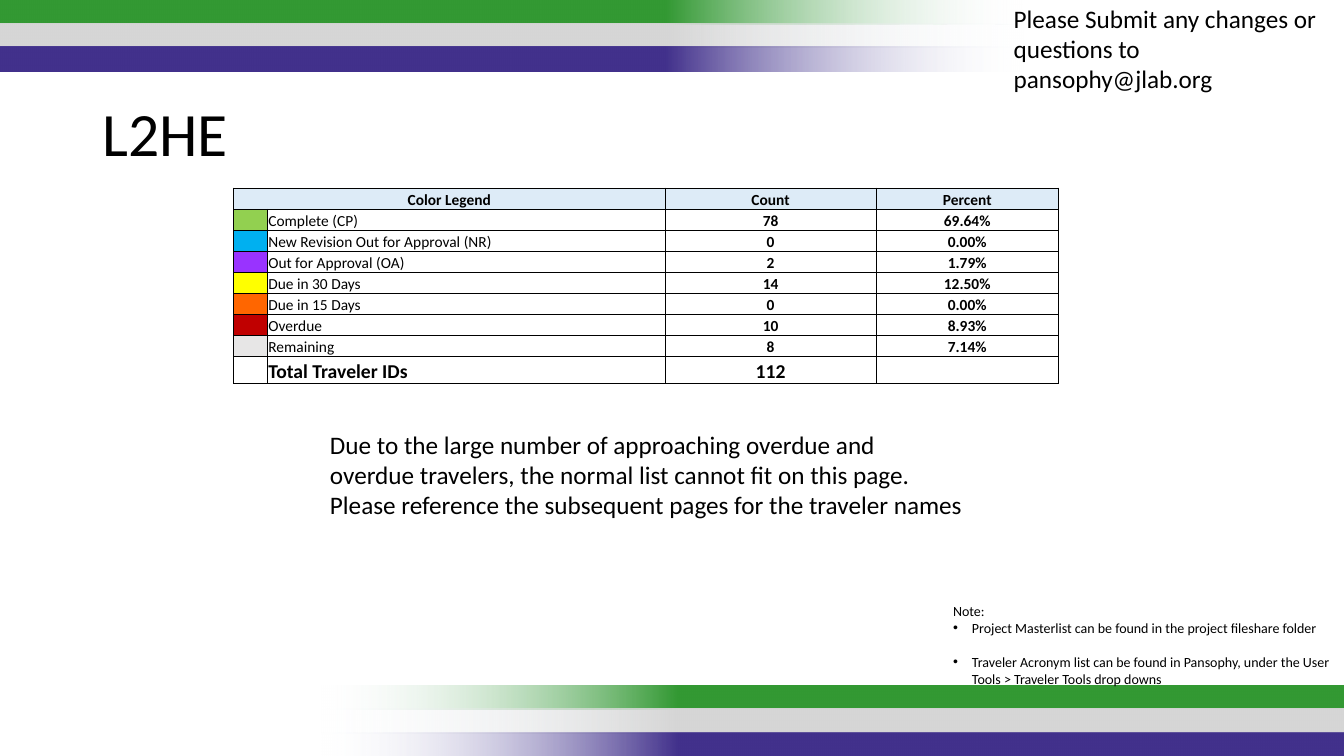
from copy import deepcopy
from dataclasses import dataclass

from lxml import etree
from pptx import Presentation
from pptx.dml.color import RGBColor
from pptx.enum.shapes import MSO_SHAPE
from pptx.enum.text import MSO_ANCHOR, MSO_AUTO_SIZE, PP_ALIGN
from pptx.oxml.ns import qn
from pptx.util import Pt

RECTANGLE = MSO_SHAPE.RECTANGLE
TOP, MIDDLE, BOTTOM = MSO_ANCHOR.TOP, MSO_ANCHOR.MIDDLE, MSO_ANCHOR.BOTTOM
LEFT, CENTER = PP_ALIGN.LEFT, PP_ALIGN.CENTER
GROW = MSO_AUTO_SIZE.SHAPE_TO_FIT_TEXT


@dataclass(frozen=True)
class Theme:
    font: str = "Calibri"
    ink: str = "000000"
    fade: str = "F7FAFD"
    header: str = "DDEBF7"
    stripes: tuple = ("339933", "D6D6D6", "42318C")
    title: float = 44
    body: float = 18
    total: float = 14
    table: float = 11
    note: float = 10


THEME = Theme()
STATUSES = [
    ("92D050", "Complete (CP)", "78", "69.64%"),
    ("00B0F0", "New Revision Out for Approval (NR)", "0", "0.00%"),
    ("9933FF", "Out for Approval (OA)", "2", "1.79%"),
    ("FFFF00", "Due in 30 Days", "14", "12.50%"),
    ("FF6600", "Due in 15 Days", "0", "0.00%"),
    ("C00000", "Overdue", "10", "8.93%"),
    ("E7E6E6", "Remaining", "8", "7.14%"),
]


def write_text(paragraph, text, size, bold=False, align=LEFT, spacing=None,
               before=0, bullet=None, indent=0):
    if bullet:
        properties = paragraph._p.get_or_add_pPr()
        properties.set("marL", str(Pt(indent)))
        properties.set("indent", str(-Pt(indent)))
        etree.SubElement(properties, qn("a:buFont")).set("typeface", "Arial")
        etree.SubElement(properties, qn("a:buChar")).set("char", bullet)
    paragraph.alignment = align
    paragraph.space_before = Pt(before)
    if spacing:
        paragraph.line_spacing = spacing
    # An empty cell keeps its row low through the paragraph-end size.
    if not text:
        end = etree.SubElement(paragraph._p, qn("a:endParaRPr"))
        end.set("sz", str(int(size * 100)))
        return
    run = paragraph.add_run()
    run.text = text
    run.font.name = THEME.font
    run.font.size = Pt(size)
    run.font.bold = bold
    run.font.color.rgb = RGBColor.from_string(THEME.ink)


class SlideBuilder:
    def __init__(self, slide, theme):
        self.slide = slide
        self.theme = theme

    def stripe(self, left, top, width, height, color, rotation):
        """Draw a bar that fades out towards its start."""
        bar = self.slide.shapes.add_shape(
            RECTANGLE, Pt(left), Pt(top), Pt(width), Pt(height))
        bar.rotation = rotation
        bar.shadow.inherit = False
        bar.line.fill.background()
        bar.fill.gradient()
        bar.fill.gradient_angle = 0
        faded, solid = bar.fill.gradient_stops
        faded.position, solid.position = 0, 0.35
        faded.color.rgb = RGBColor.from_string(self.theme.fade)
        solid.color.rgb = RGBColor.from_string(color)
        stops = bar._element.xpath(".//a:gsLst")[0]
        etree.SubElement(stops[0][0], qn("a:alpha")).set("val", "0")
        end = deepcopy(stops[1])
        end.set("pos", "100000")
        stops.append(end)

    def text_box(self, left, top, width, height, paragraphs, anchor=TOP, grow=True):
        """Place paragraphs, each a text with its format."""
        frame = self.slide.shapes.add_textbox(
            Pt(left), Pt(top), Pt(width), Pt(height)).text_frame
        frame.word_wrap = True
        frame.vertical_anchor = anchor
        if grow:
            frame.auto_size = GROW
        for index, (text, style) in enumerate(paragraphs):
            paragraph = frame.add_paragraph() if index else frame.paragraphs[0]
            write_text(paragraph, text, **style)

    def border(self, cell, side, width):
        line = etree.SubElement(cell._tc.get_or_add_tcPr(), qn(f"a:ln{side}"))
        line.set("w", str(Pt(width)))
        fill = etree.SubElement(line, qn("a:solidFill"))
        etree.SubElement(fill, qn("a:srgbClr")).set("val", self.theme.ink)

    def cell(self, cell, text, fill, outer, inset, **style):
        """Fill a cell; the sides named in outer get the heavy line."""
        for side in "LRTB":
            self.border(cell, side, 1 if side in outer else 0.5)
        if fill:
            cell.fill.solid()
            cell.fill.fore_color.rgb = RGBColor.from_string(fill)
        else:
            cell.fill.background()
        cell.margin_left = cell.margin_right = cell.margin_top = Pt(inset)
        cell.margin_bottom = 0
        cell.vertical_anchor = BOTTOM
        write_text(cell.text_frame.paragraphs[0], text, **style)

    def legend(self, left, top, widths, heights, statuses):
        total = sum(int(count) for _, _, count, _ in statuses)
        rows = [(None, "Color Legend", "Count", "Percent"), *statuses,
                (None, "Total Traveler IDs", str(total), "")]
        last_row, last_column = len(rows) - 1, len(widths) - 1
        table = self.slide.shapes.add_table(
            len(rows), len(widths), Pt(left), Pt(top),
            Pt(sum(widths)), Pt(sum(heights))).table
        table.first_row = table.horz_banding = False
        for column, width in zip(table.columns, widths):
            column.width = Pt(width)
        for row, height in zip(table.rows, heights):
            row.height = Pt(height)
        table.cell(0, 0).merge(table.cell(0, 1))
        for r, (swatch, label, count, percent) in enumerate(rows):
            header, summary = r == 0, r == last_row
            texts = (label, "", count, percent) if header else ("", label, count, percent)
            for c, text in enumerate(texts):
                outer = (("T" if header else "") + ("B" if summary else "")
                         + ("L" if c == 0 else "") + ("R" if c == last_column else ""))
                fill = self.theme.header if header else swatch if c == 0 else None
                self.cell(
                    table.cell(r, c), text, fill, outer,
                    inset=0.7 if header or c < 2 else 0,
                    size=self.theme.total if summary and text else self.theme.table,
                    bold=header or summary or c > 1,
                    align=CENTER if header or c > 1 else LEFT)


def main():
    deck = Presentation()
    deck.slide_width, deck.slide_height = Pt(960), Pt(540)
    page = SlideBuilder(deck.slides.add_slide(deck.slide_layouts[6]), THEME)

    for left, top, rotation in ((-1, 0, 180), (228.6, 489.6, 0)):
        for index, color in enumerate(THEME.stripes):
            page.stripe(left, top + index * 16.8, 732, 17.2, color, rotation)

    page.text_box(66, 62, 828, 71.5,
                  [("L2HE", dict(size=THEME.title, spacing=0.9))], MIDDLE, grow=False)
    page.legend(167, 134.5, (24, 284, 151, 130),
                [15] * (len(STATUSES) + 1) + [19.3], STATUSES)

    body = dict(size=THEME.body)
    page.text_box(717, -1.5, 243, 72.7, [
        ("Please Submit any changes or questions to pansophy@jlab.org", body)])

    note = dict(size=THEME.note)
    item = dict(note, bullet="•", indent=13.5)
    page.text_box(673.7, 427, 286, 67.7, [
        ("Note:", note),
        ("Project Masterlist can be found in the project fileshare folder", item),
        ("Traveler Acronym list can be found in Pansophy, under the User Tools > "
         "Traveler Tools drop downs", dict(item, before=12)),
    ])
    page.text_box(228.6, 303, 466, 94.5, [
        ("Due to the large number of approaching overdue and overdue travelers, "
         "the normal list cannot fit on this page. Please reference the subsequent "
         "pages for the traveler names", body)])

    deck.save("out.pptx")


if __name__ == "__main__":
    main()
